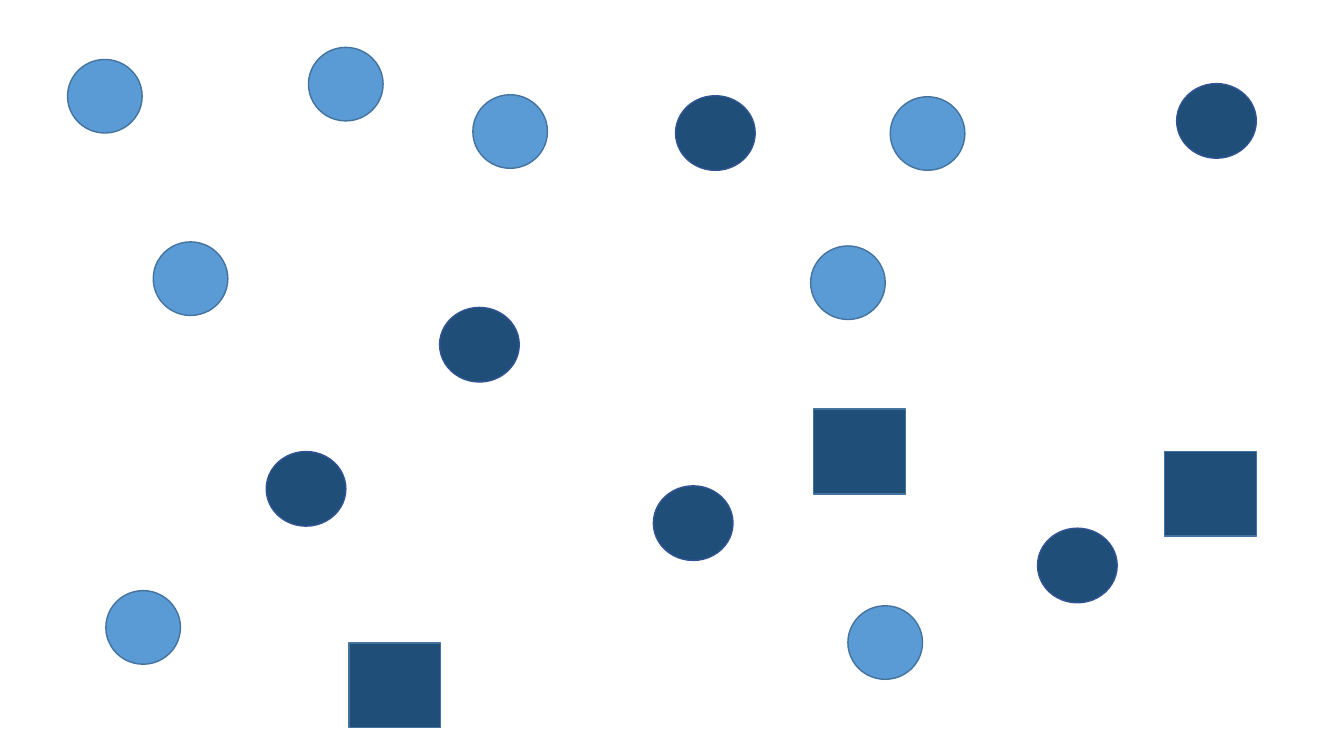
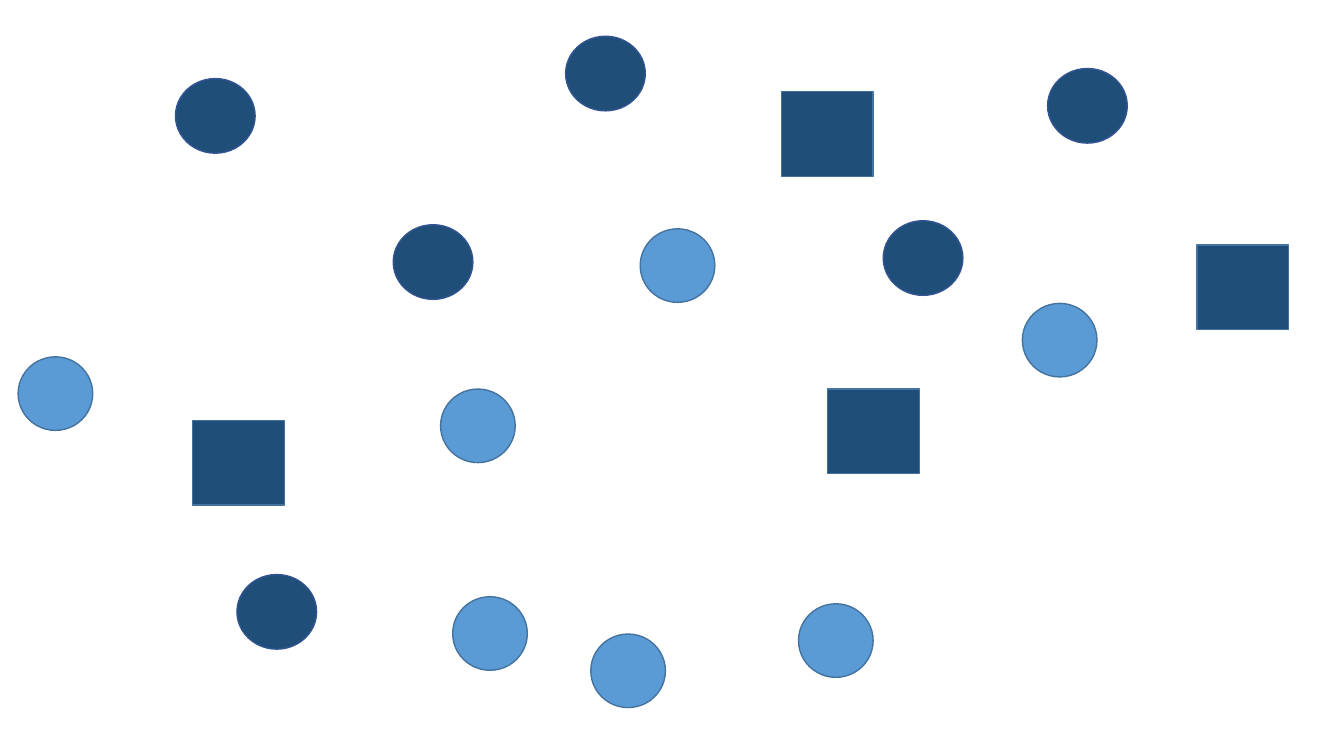
from dataclasses import dataclass

from pptx import Presentation
from pptx import util as u
from pptx.dml.color import RGBColor
from pptx.enum import shapes
from pptx.slide import Slide


@dataclass(frozen=True)
class Theme:
    sky: RGBColor = RGBColor.from_string("5B9BD5")
    navy: RGBColor = RGBColor.from_string("1F4E79")
    steel_edge: RGBColor = RGBColor.from_string("43739E")
    indigo_edge: RGBColor = RGBColor.from_string("325491")
    edge_width: u.Pt = u.Pt(1)


THEME = Theme()


@dataclass(frozen=True)
class Marker:
    """The look and size in inches of one kind of marker."""

    outline: shapes.MSO_SHAPE
    width: float
    height: float
    fill: RGBColor
    edge: RGBColor


@dataclass(frozen=True)
class Group:
    """One kind of marker with its left and top positions in inches."""

    marker: Marker
    positions: tuple[tuple[float, float], ...]


LIGHT_CIRCLE = Marker(shapes.MSO_SHAPE.OVAL, 0.74, 0.73, THEME.sky, THEME.steel_edge)
DARK_CIRCLE = Marker(shapes.MSO_SHAPE.OVAL, 0.79, 0.74, THEME.navy, THEME.indigo_edge)
DARK_SQUARE = Marker(shapes.MSO_SHAPE.RECTANGLE, 0.91, 0.84, THEME.navy, THEME.steel_edge)

PAGES: tuple[tuple[Group, ...], ...] = (
    (
        Group(LIGHT_CIRCLE, (
            (1.52, 2.4), (1.05, 5.86), (8.41, 6.01), (0.67, 0.59),
            (3.06, 0.47), (8.83, 0.96), (4.69, 0.94), (8.04, 2.44),
        )),
        Group(DARK_CIRCLE, (
            (4.36, 3.05), (10.29, 5.24), (6.7, 0.95),
            (6.48, 4.82), (2.64, 4.48), (11.67, 0.83),
        )),
        Group(DARK_SQUARE, ((3.46, 6.38), (8.07, 4.06), (11.55, 4.48))),
    ),
    (
        Group(LIGHT_CIRCLE, (
            (0.18, 3.54), (4.49, 5.92), (7.92, 5.99), (10.14, 3.01),
            (4.37, 3.86), (6.35, 2.27), (5.86, 6.29),
        )),
        Group(DARK_CIRCLE, (
            (8.76, 2.19), (1.74, 0.78), (3.9, 2.23),
            (5.61, 0.36), (2.35, 5.7), (10.39, 0.68),
        )),
        Group(DARK_SQUARE, ((11.87, 2.43), (1.91, 4.17), (8.21, 3.86), (7.75, 0.91))),
    ),
)


def draw_marker(page: Slide, marker: Marker, left: float, top: float) -> None:
    shape = page.shapes.add_shape(
        marker.outline,
        u.Inches(left), u.Inches(top), u.Inches(marker.width), u.Inches(marker.height),
    )
    shape.shadow.inherit = False
    shape.fill.solid()
    shape.fill.fore_color.rgb = marker.fill
    shape.line.color.rgb = marker.edge
    shape.line.width = THEME.edge_width


def main() -> None:
    deck = Presentation()
    deck.slide_width, deck.slide_height = u.Inches(13.33), u.Inches(7.5)
    blank = deck.slide_layouts[6]
    for groups in PAGES:
        page = deck.slides.add_slide(blank)
        for group in groups:
            for left, top in group.positions:
                draw_marker(page, group.marker, left, top)
    deck.save("out.pptx")


if __name__ == "__main__":
    main()
